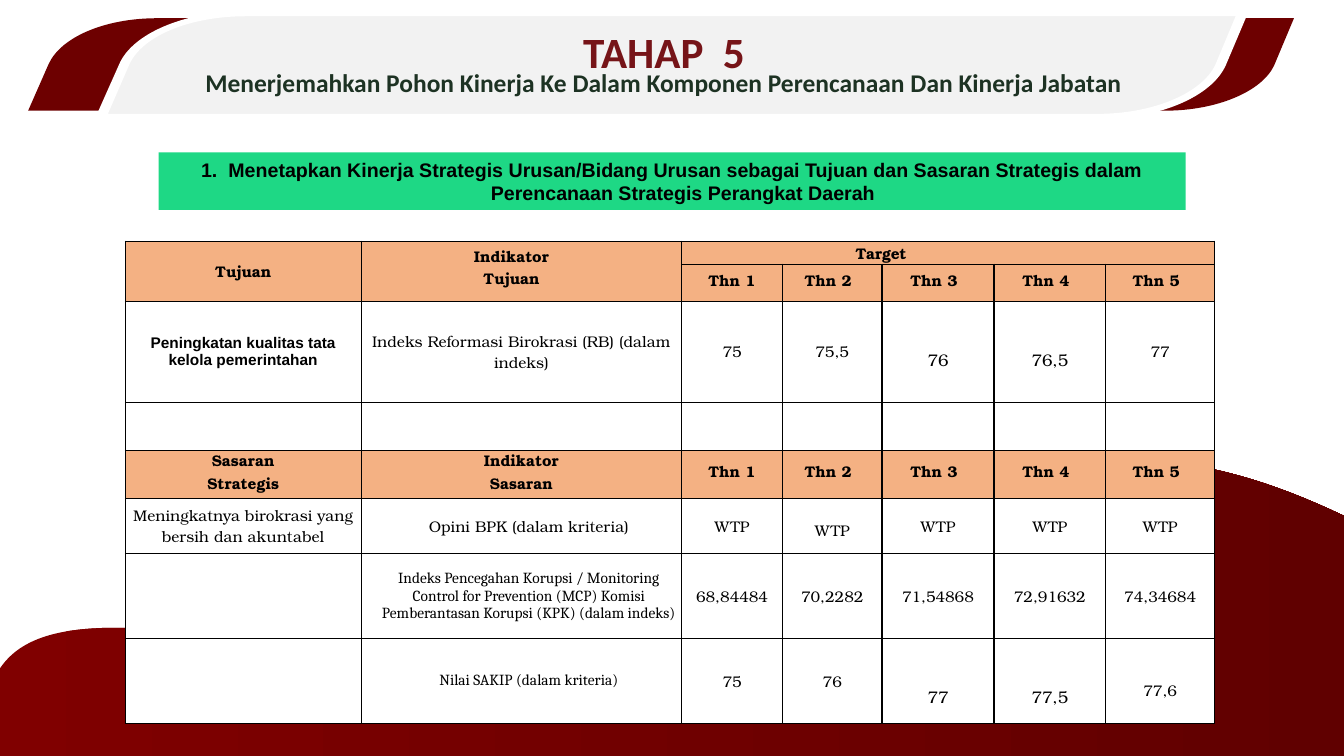
from lxml.etree import SubElement
from pptx import Presentation
from pptx.dml.color import RGBColor
from pptx.enum.shapes import MSO_SHAPE
from pptx.enum.text import MSO_ANCHOR, MSO_AUTO_SIZE, PP_ALIGN
from pptx.oxml.ns import qn
from pptx.util import Cm, Pt

COLORS = {
    "maroon": "6D0000", "wave_left": "800000", "wave_right": "600000",
    "gray": "F2F2F2", "white": "FFFFFF", "black": "000000",
    "green": "1ED885", "header": "F4B183", "title": "761418", "subtitle": "1D3223",
}


def add_run(p, text, size, font, color="black", bold=False):
    r = p.add_run()
    r.text = text
    r.font.size, r.font.name, r.font.bold = Pt(size), font, bold
    r.font.color.rgb = RGBColor.from_string(COLORS[color])


def add_outline(s, *contours):
    """Draw closed contours; six numbers make a Bezier curve, two a line."""
    builder = s.shapes.build_freeform(*[Cm(v) for v in contours[0][0]])
    for n, (start, *segments) in enumerate(contours):
        if n:
            builder.move_to(*[Cm(v) for v in start])
        points = [seg[i:i + 2] for seg in segments for i in range(0, len(seg), 2)]
        builder.add_line_segments([(Cm(x), Cm(y)) for x, y in points], close=True)
    sp = builder.convert_to_shape()
    sp.shadow.inherit = False
    sp.line.fill.background()
    # Join each three points of a curve into one Bezier element
    lines = iter(list(sp._element.iter(qn("a:lnTo"))))
    for start, *segments in contours:
        end = start
        for seg in segments:
            first = next(lines)
            if len(seg) == 6:
                first.tag = qn("a:cubicBezTo")
                for extra in (next(lines), next(lines)):
                    first.append(extra[0])
                    extra.getparent().remove(extra)
            end = seg[-2:]
    return sp


prs = Presentation()
prs.slide_width, prs.slide_height = Cm(33.87), Cm(19.05)
s = prs.slides.add_slide(prs.slide_layouts[5])

# Wave at the bottom
wave = add_outline(s, [
    (-0.13, 17.07),
    (1.6, 13.54, 11.48, 19.1, 20.47, 14.5),
    (22.78, 13.31, 24.41, 11.79, 27.61, 11.58),
    (30.33, 11.43, 32.51, 12.34, 34.14, 13.13),
    (34.14, 19.25), (-0.13, 19.25),
    (-0.51, 18.08, -0.3, 17.42, -0.13, 17.07)])
wave.fill.gradient()
wave.fill.gradient_angle = 0
for stop, name in zip(wave.fill.gradient_stops, ("wave_left", "wave_right")):
    stop.color.rgb = RGBColor.from_string(COLORS[name])

# Green heading
sp = s.shapes.add_shape(MSO_SHAPE.RECTANGLE, Cm(4), Cm(3.84), Cm(25.88), Cm(1.45))
sp.shadow.inherit = False
sp.fill.solid()
sp.fill.fore_color.rgb = RGBColor.from_string(COLORS["green"])
sp.line.fill.background()
tf = sp.text_frame
tf.word_wrap = True
p = tf.paragraphs[0]
p.alignment = PP_ALIGN.CENTER
pPr = p._p.get_or_add_pPr()
pPr.set("marL", str(Cm(0.69)))
pPr.set("indent", str(-Cm(0.69)))
SubElement(pPr, qn("a:buFont"), typeface="+mj-lt")
SubElement(pPr, qn("a:buAutoNum"), type="arabicPeriod")
add_run(p, "Menetapkan Kinerja Strategis Urusan/Bidang Urusan sebagai Tujuan dan Sasaran "
        "Strategis dalam Perencanaan Strategis Perangkat Daerah ", 14, "Arial", bold=True)

# Table contents
years = [f"Thn {n}" for n in range(1, 6)]
rows = [
    ["Tujuan", "Indikator\nTujuan", "Target", "", "", "", ""],
    ["", "", *years],
    ["Peningkatan kualitas tata kelola pemerintahan",
     "Indeks Reformasi Birokrasi (RB) (dalam indeks)", "75", "75,5", "76", "76,5", "77"],
    [""] * 7,
    ["Sasaran\nStrategis", "Indikator\nSasaran", *years],
    ["Meningkatnya birokrasi yang bersih dan akuntabel", "Opini BPK (dalam kriteria)",
     *["WTP"] * 5],
    ["", "Indeks Pencegahan Korupsi / Monitoring Control for Prevention (MCP) Komisi "
     "Pemberantasan Korupsi (KPK) (dalam indeks)",
     "68,84484", "70,2282", "71,54868", "72,91632", "74,34684"],
    ["", "Nilai SAKIP (dalam kriteria)", "75", "76", "77", "77,5", "77,6"],
]
col_widths = [5.94, 8.08, 2.54, 2.51, 2.82, 2.82, 2.74]
row_heights = [0.58, 0.93, 2.55, 1.21, 1.21, 1.39, 2.14, 2.14]
header_rows = (0, 1, 4)
fonts = {(2, 0): "Arial", (6, 1): "Cambria", (7, 1): "Cambria"}
large = [(2, 4), (2, 5), (7, 4), (7, 5)]
left_margins = {(2, 0): 0.2, (5, 1): 0.38, (6, 1): 0.38, (7, 1): 0.38}
right_margins = {(0, 1): 0.5, (0, 2): 3.38, (2, 0): 0.2}
top_margins = {(2, 4): 0.38, (2, 5): 0.38, (5, 3): 0.2,
               (7, 4): 0.8, (7, 5): 0.8, (7, 6): 0.5}
first_line_spacing = {0: 10, 1: 11.7, 4: 11.7}

# Table
table = s.shapes.add_table(len(rows), len(col_widths), Cm(3.16), Cm(6.08),
                           Cm(sum(col_widths)), Cm(sum(row_heights))).table
for col, width in zip(table.columns, col_widths):
    col.width = Cm(width)
for row, height in zip(table.rows, row_heights):
    row.height = Cm(height)
for first, last in (((0, 0), (1, 0)), ((0, 1), (1, 1)), ((0, 2), (0, 6))):
    table.cell(*first).merge(table.cell(*last))

for i, texts in enumerate(rows):
    for j, text in enumerate(texts):
        cell = table.cell(i, j)
        header = i in header_rows
        tcPr = cell._tc.get_or_add_tcPr()
        for side in ("lnL", "lnR", "lnT", "lnB"):
            ln = SubElement(tcPr, qn(f"a:{side}"), w=str(Pt(1)))
            SubElement(SubElement(ln, qn("a:solidFill")), qn("a:srgbClr"), val=COLORS["black"])
        cell.fill.solid()
        cell.fill.fore_color.rgb = RGBColor.from_string(COLORS["header" if header else "white"])
        cell.vertical_anchor = MSO_ANCHOR.MIDDLE
        cell.margin_left = Cm(left_margins.get((i, j), 0))
        cell.margin_top = Cm(top_margins.get((i, j), 0))
        cell.margin_right = Cm(right_margins.get((i, j), 0.2 if header and j > 2 else 0))
        cell.margin_bottom = 0
        lines = text.split("\n")
        for n, line in enumerate(lines):
            p = cell.text_frame.paragraphs[0] if n == 0 else cell.text_frame.add_paragraph()
            p.alignment = PP_ALIGN.CENTER
            if not line:
                SubElement(p._p, qn("a:endParaRPr"), sz="1100")
                continue
            if n == 0 and (i in (1, 4) or len(lines) > 1):
                p.line_spacing = Pt(first_line_spacing[i])
            add_run(p, line, 12 if (i, j) in large else 11,
                    fonts.get((i, j), "TeX Gyre Bonum"), bold=header or (i, j) == (2, 0))

# Title banner: maroon ends, gray plate, white rim
banner = [
    ("maroon", [[
        (29.36, 2.79), (0.71, 2.79), (1.22, 1.63), (1.52, 0.94, 2.64, 0.46, 3.96, 0.46),
        (32.61, 0.46), (32.11, 1.65), (31.8, 2.31, 30.66, 2.79, 29.36, 2.79)]]),
    ("gray", [[
        (2.57, 2.92), (3.12, 1.63), (3.45, 0.86, 4.72, 0.33, 6.2, 0.33), (31.32, 0.33),
        (30.76, 1.63), (30.43, 2.39, 29.13, 2.92, 27.69, 2.92)]]),
    ("white", [
        [(31.14, 0.41), (30.63, 1.63), (30.3, 2.34, 29.08, 2.87, 27.66, 2.87), (2.72, 2.87),
         (3.25, 1.65), (3.56, 0.91, 4.78, 0.41, 6.2, 0.41)],
        [(31.47, 0.28), (6.2, 0.28), (4.67, 0.28, 3.33, 0.84, 3, 1.63), (2.39, 3),
         (27.69, 3), (29.21, 3, 30.53, 2.44, 30.89, 1.65)]]),
]
for color, contours in banner:
    sp = add_outline(s, *contours)
    sp.fill.solid()
    sp.fill.fore_color.rgb = RGBColor.from_string(COLORS[color])

# Title, brought in front of the banner
title = s.shapes.title
s.shapes._spTree.append(title._element)
title.left, title.top, title.width, title.height = Cm(4.01), Cm(0.38), Cm(25.45), Cm(2.67)
tf = title.text_frame
tf.word_wrap = True
tf.auto_size = MSO_AUTO_SIZE.NONE
tf.vertical_anchor = MSO_ANCHOR.MIDDLE
tf.margin_left = tf.margin_right = Cm(0.25)
tf.margin_top = tf.margin_bottom = Cm(0.5)
title_lines = [
    ("TAHAP  5", 30.8, "title"),
    ("Menerjemahkan Pohon Kinerja Ke Dalam Komponen Perencanaan Dan Kinerja Jabatan",
     18.2, "subtitle"),
]
for n, (text, size, color) in enumerate(title_lines):
    p = tf.paragraphs[0] if n == 0 else tf.add_paragraph()
    p.alignment = PP_ALIGN.CENTER
    p.line_spacing = 0.7
    p.space_before = Pt(0)
    add_run(p, text, size, "Calibri", color, True)

prs.save("out.pptx")
